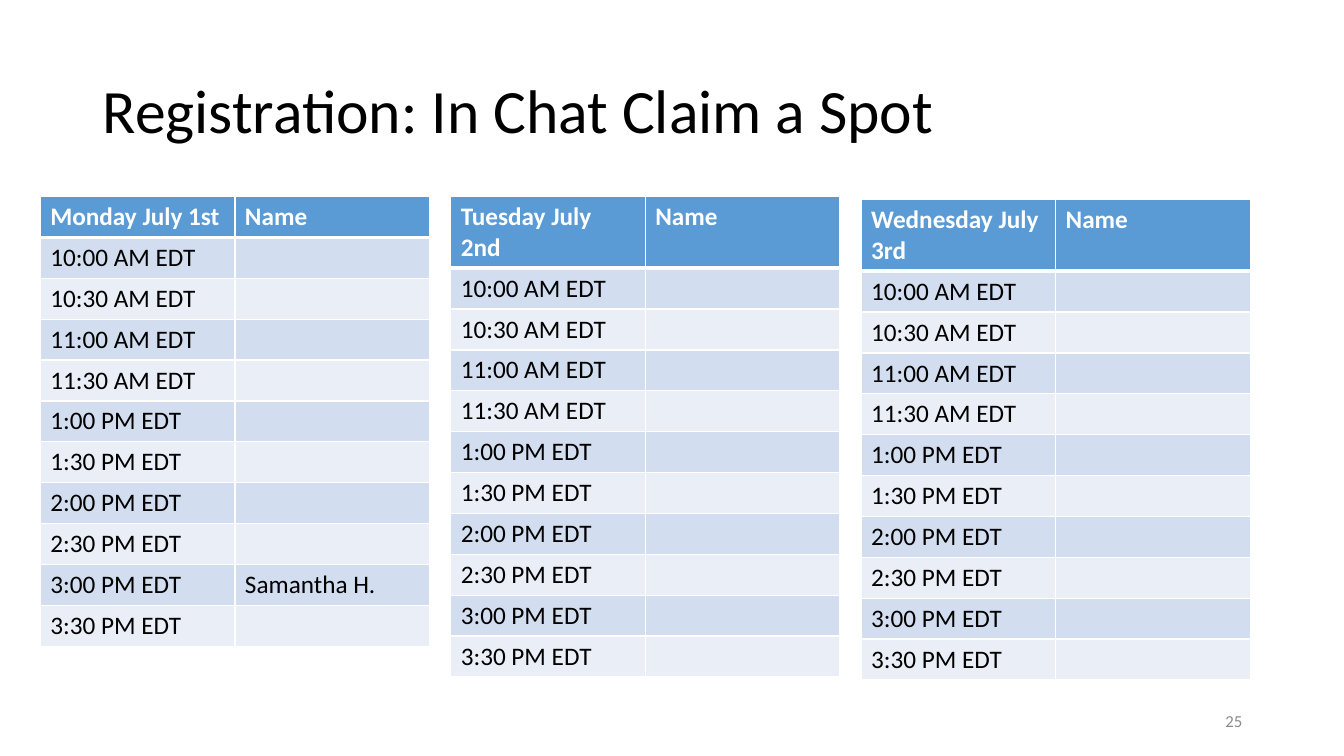
from dataclasses import dataclass

import pptx
import pptx.dml.color
import pptx.enum.text
import pptx.oxml
import pptx.oxml.ns
import pptx.util
from pptx.util import Inches


@dataclass(frozen=True)
class Theme:
    font: str = "Calibri"
    title_size: int = 44
    table_size: int = 18
    number_size: int = 12
    text: str = "000000"
    header_text: str = "FFFFFF"
    number: str = "8C8C8C"
    header_fill: str = "5B9BD5"
    bands: tuple = ("D2DEEF", "EAEFF7")
    border: str = "FFFFFF"
    border_width: int = 1
    header_rule: int = 3


THEME = Theme()
TIMES = [f"{hour} EDT" for hour in (
    "10:00 AM", "10:30 AM", "11:00 AM", "11:30 AM", "1:00 PM",
    "1:30 PM", "2:00 PM", "2:30 PM", "3:00 PM", "3:30 PM")]
# Day, names already claimed by time, top of the table
DAYS = [
    ("Monday July 1st", {"3:00 PM EDT": "Samantha H."}, 1.95),
    ("Tuesday July 2nd", {}, 1.95),
    ("Wednesday July 3rd", {}, 1.98),
]
DAYS_LEFT, DAY_STEP, DAY_WIDTH, ROW_HEIGHT = 0.4, 4.07, 3.86, 0.33


def rgb(value):
    return pptx.dml.color.RGBColor.from_string(value)


def style_text(frame, size, color, bold=False):
    for paragraph in frame.paragraphs:
        for run in paragraph.runs:
            run.font.name = THEME.font
            run.font.size = pptx.util.Pt(size)
            run.font.bold = bold
            run.font.color.rgb = rgb(color)


def add_borders(cell, top, bottom):
    """Give the cell side borders of the normal width and the given top and bottom."""
    sides = {"L": THEME.border_width, "R": THEME.border_width, "T": top, "B": bottom}
    properties = cell._tc.get_or_add_tcPr()
    for side, width in sides.items():
        properties.append(pptx.oxml.parse_xml(
            f'<a:ln{side} {pptx.oxml.ns.nsdecls("a")} w="{pptx.util.Pt(width)}">'
            f'<a:solidFill><a:srgbClr val="{THEME.border}"/></a:solidFill>'
            f'</a:ln{side}>'))


def add_title(slide, left, top, width, height):
    title = slide.shapes.title
    title.left, title.top, title.width, title.height = map(
        Inches, (left, top, width, height))
    frame = title.text_frame
    frame.text = "Registration: In Chat Claim a Spot"
    frame.vertical_anchor = pptx.enum.text.MSO_ANCHOR.MIDDLE
    frame.paragraphs[0].alignment = pptx.enum.text.PP_ALIGN.LEFT
    frame.paragraphs[0].line_spacing = 0.9
    style_text(frame, THEME.title_size, THEME.text)


def add_day(slide, day, claims, left, top, width):
    """Add one day's sign-up table of times and names."""
    rows = [(day, "Name")] + [(time, claims.get(time, "")) for time in TIMES]
    schedule = slide.shapes.add_table(
        len(rows), 2, Inches(left), Inches(top), Inches(width),
        Inches(ROW_HEIGHT * len(rows))).table
    for row_index, row in enumerate(rows):
        is_header = row_index == 0
        fill = THEME.header_fill if is_header else THEME.bands[(row_index - 1) % 2]
        color = THEME.header_text if is_header else THEME.text
        for column_index, entry in enumerate(row):
            cell = schedule.cell(row_index, column_index)
            cell.text = entry
            style_text(cell.text_frame, THEME.table_size, color, is_header)
            add_borders(
                cell,
                top=THEME.header_rule if row_index == 1 else THEME.border_width,
                bottom=THEME.header_rule if is_header else THEME.border_width)
            cell.fill.solid()
            cell.fill.fore_color.rgb = rgb(fill)


def add_slide_number(slide, left, top, width, height):
    number = slide.shapes.add_textbox(*map(Inches, (left, top, width, height)))
    frame = number.text_frame
    frame.word_wrap = True
    frame.text = "25"
    frame.vertical_anchor = pptx.enum.text.MSO_ANCHOR.MIDDLE
    frame.paragraphs[0].alignment = pptx.enum.text.PP_ALIGN.RIGHT
    style_text(frame, THEME.number_size, THEME.number)


def main():
    deck = pptx.Presentation()
    deck.slide_width, deck.slide_height = Inches(13.33), Inches(7.5)
    slide = deck.slides.add_slide(deck.slide_layouts.get_by_name("Title Only"))
    add_title(slide, 0.92, 0.4, 11.5, 1.45)
    for index, (day, claims, top) in enumerate(DAYS):
        add_day(slide, day, claims, DAYS_LEFT + index * DAY_STEP, top, DAY_WIDTH)
    add_slide_number(slide, 9.42, 6.95, 3, 0.4)
    deck.save("out.pptx")


if __name__ == "__main__":
    main()
